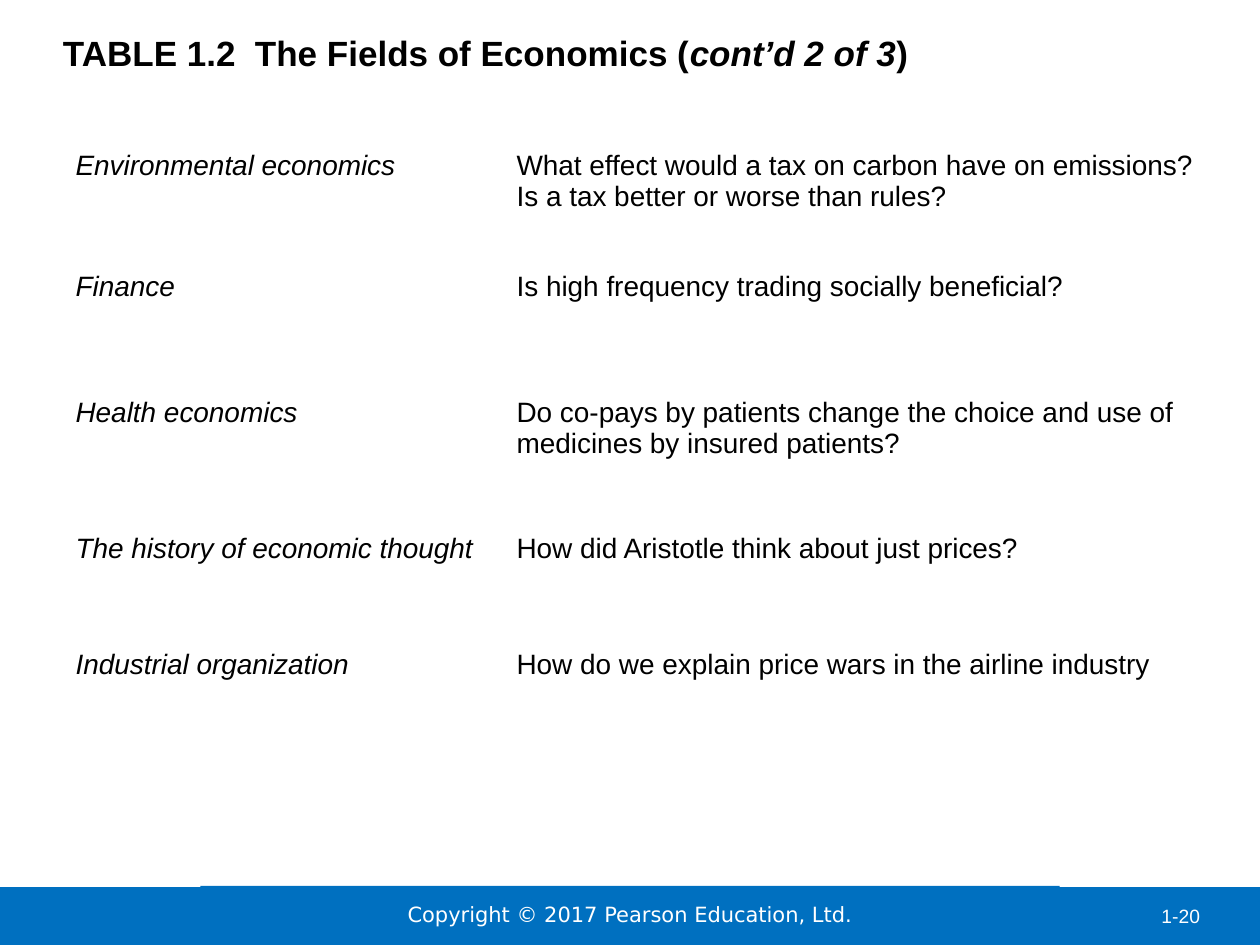
"""Build a slide that lists fields of economics with sample questions."""
from dataclasses import dataclass

from pptx import Presentation
from pptx import util as u
from pptx.dml.color import RGBColor
from pptx.enum import shapes, text


@dataclass(frozen=True)
class Theme:
    blue: RGBColor = RGBColor(0x00, 0x70, 0xC0)
    white: RGBColor = RGBColor(0xFF, 0xFF, 0xFF)
    black: RGBColor = RGBColor(0, 0, 0)
    face: str = "Arial"
    foot: str = "DejaVu Sans"
    head: int = 20
    body: int = 16
    note: int = 12
    page: int = 11


@dataclass(frozen=True)
class Box:
    col: float
    row: float
    cols: float
    rows: float

    def spans(self) -> list[int]:
        return [grid(n) for n in (self.col, self.row, self.cols, self.rows)]


@dataclass(frozen=True)
class Field:
    name: str
    query: str
    rows: float


THEME = Theme()
WIDE, TALL = 100, 75
UNIT = u.Inches(10) / WIDE
COLS = (35, 55)
FIELDS = (
    Field("Environmental economics",
          "What effect would a tax on carbon have on emissions? "
          "Is a tax better or worse than rules?", 9.6),
    Field("Finance", "Is high frequency trading socially beneficial?", 10),
    Field("Health economics",
          "Do co-pays by patients change the choice and use of "
          "medicines by insured patients?", 10.8),
    Field("The history of economic thought",
          "How did Aristotle think about just prices?", 9.2),
    Field("Industrial organization",
          "How do we explain price wars in the airline industry", 6.4),
)


def grid(count: float) -> int:
    """Turn a count of grid units into a length."""
    return round(count * UNIT)


def style(run, size: int, color: RGBColor, face: str = THEME.face,
          bold: bool = False, slant: bool = False) -> None:
    """Set the font of one run."""
    font = run.font
    font.size, font.name = u.Pt(size), face
    font.bold, font.italic = bold, slant
    font.color.rgb = color


def inset(frame, pad: float) -> None:
    """Give a text frame the same margin on all sides."""
    frame.margin_left = frame.margin_right = grid(pad)
    frame.margin_top = frame.margin_bottom = grid(pad)


def band(slide, box: Box):
    """Draw a plain blue bar."""
    bar = slide.shapes.add_shape(shapes.MSO_SHAPE.RECTANGLE, *box.spans())
    bar.shadow.inherit = False
    bar.fill.solid()
    bar.fill.fore_color.rgb = THEME.blue
    bar.line.fill.background()
    return bar


def footer(slide) -> None:
    """Draw the bars, the copyright line and the page number."""
    band(slide, Box(-0.1, 70.4, WIDE + 0.2, 4.7))
    frame = band(slide, Box(15.9, 70.3, 68.2, 4.5)).text_frame
    inset(frame, 0)
    frame.vertical_anchor = text.MSO_ANCHOR.MIDDLE
    frame.text = "Copyright © 2017 Pearson Education, Ltd."
    line = frame.paragraphs[0]
    line.alignment = text.PP_ALIGN.CENTER
    style(line.runs[0], THEME.note, THEME.white, THEME.foot)
    page = slide.shapes.add_textbox(*Box(91.2, 71.3, 7.6, 2.9).spans())
    page.text_frame.word_wrap = True
    page.text_frame.text = "1-20"
    style(page.text_frame.paragraphs[0].runs[0], THEME.page, THEME.white)


def title(slide) -> None:
    """Write the heading with its slanted part."""
    frame = slide.shapes.add_textbox(*Box(5, 2.5, 90, 11.7).spans()).text_frame
    frame.word_wrap = True
    inset(frame, 0)
    line = frame.paragraphs[0]
    parts = (("TABLE 1.2  The Fields of Economics (", False),
             ("cont’d 2 of 3", True), (")", False))
    for words, slant in parts:
        run = line.add_run()
        run.text = words
        style(run, THEME.head, THEME.black, bold=True, slant=slant)


def fill(cell, words: str, slant: bool) -> None:
    """Write one table cell without a background."""
    cell.fill.background()
    cell.margin_left, cell.margin_right = grid(1), 0
    cell.margin_top = cell.margin_bottom = grid(0.5)
    cell.text_frame.text = words
    style(cell.text_frame.paragraphs[0].runs[0], THEME.body, THEME.black,
          slant=slant)


def table(slide, fields: tuple[Field, ...]) -> None:
    """Lay out the fields and their questions."""
    box = Box(5, 11.4, sum(COLS), sum(f.rows for f in fields))
    tab = slide.shapes.add_table(len(fields), len(COLS), *box.spans()).table
    tab.first_row = tab.horz_banding = False
    for col, wide in zip(tab.columns, COLS):
        col.width = grid(wide)
    for row, field in zip(tab.rows, fields):
        row.height = grid(field.rows)
        fill(row.cells[0], field.name, True)
        fill(row.cells[1], field.query, False)


def main() -> None:
    """Build and save the slide."""
    deck = Presentation()
    deck.slide_width, deck.slide_height = grid(WIDE), grid(TALL)
    slide = deck.slides.add_slide(deck.slide_layouts[6])
    footer(slide)
    title(slide)
    table(slide, FIELDS)
    deck.save("out.pptx")


if __name__ == "__main__":
    main()
